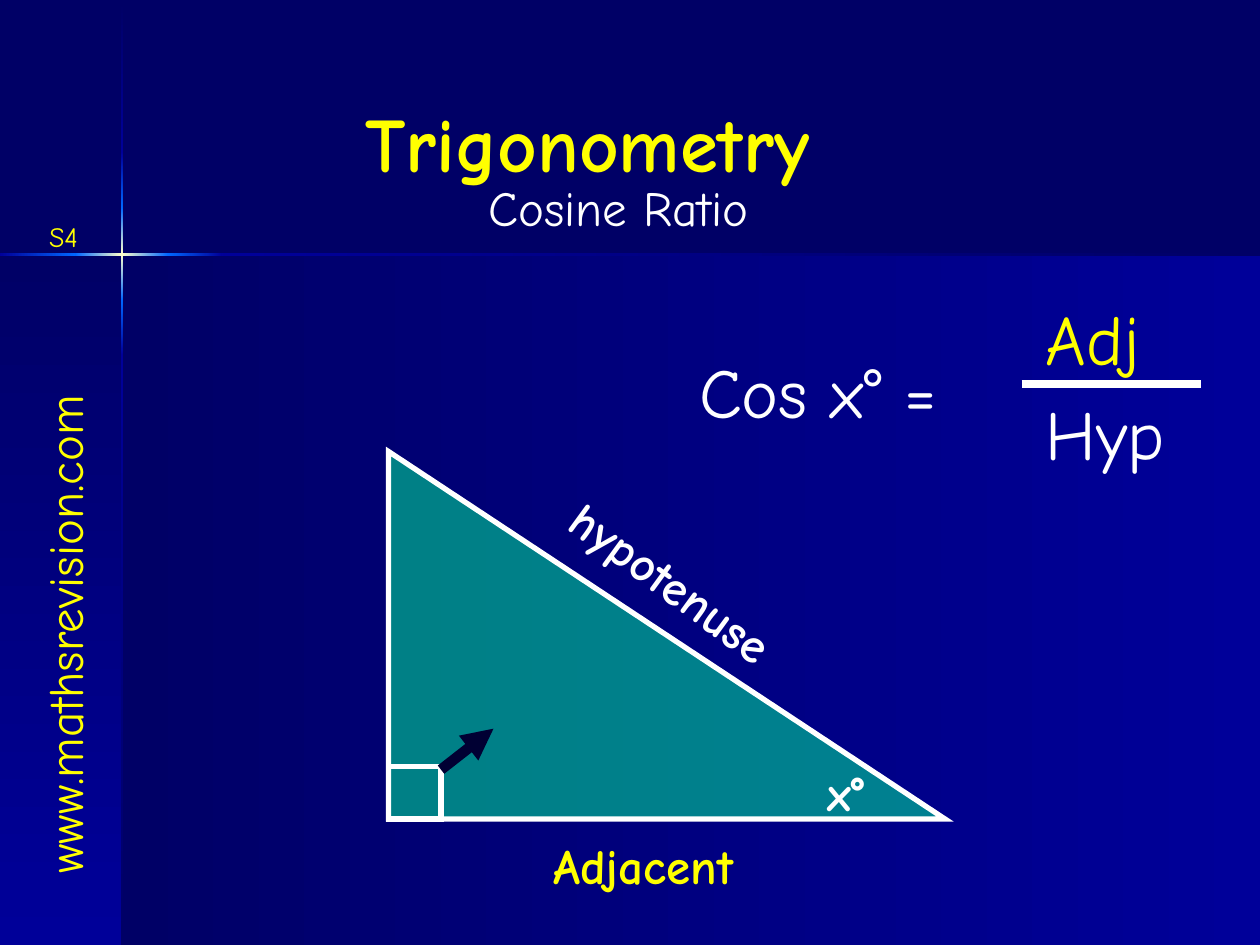
from copy import deepcopy
from itertools import pairwise
from lxml.etree import SubElement
from pptx import Presentation
from pptx.dml.color import RGBColor
from pptx.enum.shapes import MSO_CONNECTOR, MSO_SHAPE
from pptx.enum.text import MSO_ANCHOR, MSO_AUTO_SIZE, PP_ALIGN
from pptx.oxml.ns import qn
from pptx.util import Inches, Pt


class Theme:
    font = "Comic Neue"
    night, deep, azure, cream = "000066", "000099", "0066FF", "FFFFCC"
    white, yellow, mint, ink = "FFFFFF", "FFFF00", "00FF99", "000033"
    title, big, body, small = 44, 40, 28, 16
    edge, rule, arrow = 3, 4.5, 6


# The slide is a grid of 120 columns by 90 rows, 12 to the inch.
COLS, ROWS, CELL = 120, 90, Inches(1) / 12
CROSS = (11.64, 24.24)
THICK = 0.24

PANELS = [
    ((CROSS[0], CROSS[1], COLS - CROSS[0], ROWS - CROSS[1]), False),
    ((0, CROSS[1], CROSS[0], ROWS - CROSS[1]), True),
]
# Beams change colour at these knots: (place, colour), then upright or not
BEAMS = [
    ([(0.1, Theme.night), (14.5, Theme.deep), (19.8, Theme.azure),
      (28.6, Theme.azure), (33.8, Theme.deep), (ROWS, Theme.night)], True),
    ([(0, Theme.deep), (7.2, Theme.azure), (16, Theme.azure),
      (21.2, Theme.deep), (COLS, Theme.night)], False),
]

TRI = (37, 43, 53, 35)
SIDE = 5
LINES = [
    ((97.3, 36.6), (114.4, 36.6), Theme.white, Theme.rule, False),
    ((42, 73.3), (47, 69.4), Theme.ink, Theme.arrow, True),
]

MID = {"align": PP_ALIGN.CENTER}
TEXTS = [
    ("www.mathsrevision.com", (-20.3, 54.6, 52.7, 6.8), Theme.body,
     Theme.yellow, {"turn": 270, "wrap": False}),
    ("Trigonometry", (33.6, 8.5, 49.3, 10.1), Theme.title,
     Theme.yellow, {"bold": True}),
    ("Cosine Ratio", (42, 16.3, 33.8, 7.2), Theme.body,
     Theme.white, {**MID, "fit": MSO_AUTO_SIZE.NONE}),
    ("S4", (3.1, 20.3, 5.9, 4.4), Theme.small,
     Theme.yellow, {**MID, "wrap": False}),
    ("Cos x° =", (65.4, 32.6, 29, 9.2), Theme.big, Theme.white, {}),
    ("Adj", (98.4, 27.6, 17, 9.2), Theme.big, Theme.yellow, {}),
    ("Hyp", (98.4, 36.6, 15, 9.2), Theme.big, Theme.white, {}),
    ("Adjacent", (49.9, 79, 22.7, 6.8), Theme.body, Theme.yellow,
     {**MID, "bold": True, "wrap": False, "anchor": MSO_ANCHOR.MIDDLE}),
    ("x°", (76.6, 72, 8, 6.8), Theme.body, Theme.white,
     {**MID, "bold": True, "wrap": False, "anchor": MSO_ANCHOR.MIDDLE}),
    ("hypotenuse", (47, 52, 34, 6.8), Theme.body, Theme.white,
     {**MID, "bold": True, "turn": 36.1}),
]


def rgb(hue):
    return RGBColor.from_string(hue)


def emu(vals):
    return [round(v * CELL) for v in vals]


def put(obj, vals):
    for key, val in vals.items():
        setattr(obj, key, val)


def shape(slide, kind, box):
    item = slide.shapes.add_shape(kind, *emu(box))
    item.shadow.inherit = False
    return item


def blend(slide, box, hues, down):
    """Draw a borderless block with evenly spaced gradient colours."""
    item = shape(slide, MSO_SHAPE.RECTANGLE, box)
    item.line.fill.background()
    item.fill.gradient()
    item.fill.gradient_angle = 270 if down else 0
    stops = item._element.spPr.find(".//" + qn("a:gsLst"))
    for _ in hues[2:]:
        stops.append(deepcopy(stops[0]))
    for i, (stop, hue) in enumerate(zip(item.fill.gradient_stops, hues)):
        stop.position = i / (len(hues) - 1)
        stop.color.rgb = rgb(hue)


def beam(slide, knots, down):
    """Draw one arm of the cross; equal end colours glow in the middle."""
    for (start, one), (end, two) in pairwise(knots):
        hues = [one, Theme.cream, two] if one == two else [one, two]
        if down:
            box = (CROSS[0] - THICK / 2, start, THICK, end - start)
        else:
            box = (start, CROSS[1] - THICK / 2, end - start, THICK)
        blend(slide, box, hues, down)


def stroke(item, hue, width):
    item.line.color.rgb = rgb(hue)
    item.line.width = Pt(width)
    return item.line._get_or_add_ln()


def outline(slide, kind, box):
    item = shape(slide, kind, box)
    item.fill.background()
    edge = stroke(item, Theme.white, Theme.edge)
    SubElement(edge, qn("a:miter"), lim="800000")
    return item


def figure(slide):
    tri = outline(slide, MSO_SHAPE.RIGHT_TRIANGLE, TRI)
    tri.fill.solid()
    tri.fill.fore_color.rgb = rgb(Theme.mint)
    hue = tri._element.spPr.find(qn("a:solidFill"))[0]
    SubElement(hue, qn("a:alpha"), val="50000")
    left, top, _, high = TRI
    outline(slide, MSO_SHAPE.RECTANGLE, (left, top + high - SIDE, SIDE, SIDE))


def link(slide, start, end, hue, width, head):
    item = slide.shapes.add_connector(
        MSO_CONNECTOR.STRAIGHT, *emu(start + end))
    edge = stroke(item, hue, width)
    if head:
        SubElement(edge, qn("a:tailEnd"), type="triangle")
    SubElement(item._element.spPr, qn("a:effectLst"))


def label(slide, text, box, size, hue, opts):
    item = slide.shapes.add_textbox(*emu(box))
    item.rotation = opts.get("turn", 0)
    frame = item.text_frame
    put(frame, {
        "word_wrap": opts.get("wrap", True),
        "auto_size": opts.get("fit", MSO_AUTO_SIZE.SHAPE_TO_FIT_TEXT),
        "vertical_anchor": opts.get("anchor", MSO_ANCHOR.TOP),
    })
    para = frame.paragraphs[0]
    para.alignment = opts.get("align", PP_ALIGN.LEFT)
    run = para.add_run()
    run.text = text
    put(run.font, {"name": Theme.font, "size": Pt(size),
                   "bold": opts.get("bold", False)})
    run.font.color.rgb = rgb(hue)


def main():
    deck = Presentation()
    deck.slide_width, deck.slide_height = emu((COLS, ROWS))
    slide = deck.slides.add_slide(deck.slide_layouts[6])
    back = slide.background.fill
    back.solid()
    back.fore_color.rgb = rgb(Theme.night)
    for box, down in PANELS:
        blend(slide, box, [Theme.night, Theme.deep], down)
    for knots, down in BEAMS:
        beam(slide, knots, down)
    figure(slide)
    for row in LINES:
        link(slide, *row)
    for row in TEXTS:
        label(slide, *row)
    deck.save("out.pptx")


if __name__ == "__main__":
    main()
